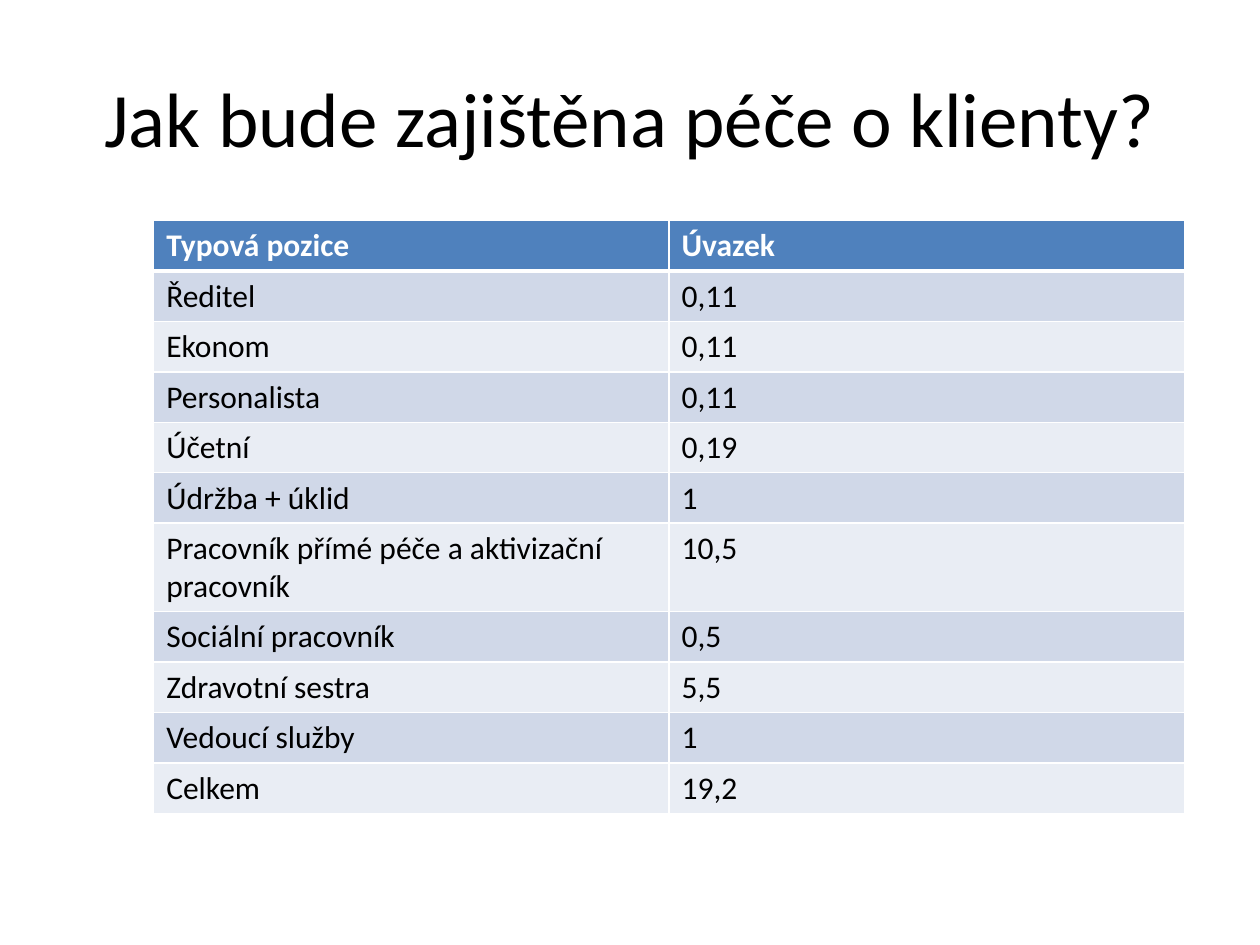
from lxml.etree import SubElement
from pptx import Presentation
from pptx.dml.color import RGBColor
from pptx.enum.text import MSO_ANCHOR, PP_ALIGN
from pptx.oxml.ns import qn
from pptx.util import Inches, Pt

# Content
TITLE = "Jak bude zajištěna péče o klienty?"
HEADER = ("Typová pozice", "Úvazek")
POSITIONS = [
    ("Ředitel", "0,11"),
    ("Ekonom", "0,11"),
    ("Personalista", "0,11"),
    ("Účetní", "0,19"),
    ("Údržba + úklid", "1"),
    ("Pracovník přímé péče a aktivizační pracovník", "10,5"),
    ("Sociální pracovník", "0,5"),
    ("Zdravotní sestra", "5,5"),
    ("Vedoucí služby", "1"),
    ("Celkem", "19,2"),
]

# Style
FONT = "Calibri"
BLACK, WHITE, BLUE = "000000", "FFFFFF", "4F81BD"
BANDS = ("E9EDF4", "D0D8E8")
COLUMN_WIDTH, ROW_HEIGHT = 4.09, 0.4


def color(value):
    return RGBColor.from_string(value)


def write(frame, text, size=18, fill=BLACK, bold=False, align=PP_ALIGN.LEFT):
    paragraph = frame.paragraphs[0]
    paragraph.alignment = align
    run = paragraph.add_run()
    run.text = text
    run.font.name = FONT
    run.font.size = Pt(size)
    run.font.bold = bold
    run.font.color.rgb = color(fill)


def set_borders(cell, **widths):
    properties = cell._tc.get_or_add_tcPr()
    for side in "LRTB":
        line = SubElement(properties, qn(f"a:ln{side}"), w=str(Pt(widths.get(side, 1))))
        solid = SubElement(line, qn("a:solidFill"))
        SubElement(solid, qn("a:srgbClr"), val=WHITE)


presentation = Presentation()
presentation.slide_width = Inches(10)
presentation.slide_height = Inches(7.5)
slide = presentation.slides.add_slide(presentation.slide_layouts[6])

# Title
title = slide.shapes.add_textbox(Inches(0.5), Inches(0.3), Inches(9), Inches(1.25))
title.text_frame.word_wrap = True
title.text_frame.vertical_anchor = MSO_ANCHOR.MIDDLE
write(title.text_frame, TITLE, size=44, align=PP_ALIGN.CENTER)

# Table of positions
rows = [HEADER, *POSITIONS]
table = slide.shapes.add_table(
    len(rows), len(HEADER), Inches(1.22), Inches(1.75),
    Inches(COLUMN_WIDTH * len(HEADER)), Inches(ROW_HEIGHT * len(rows)),
).table
for column in table.columns:
    column.width = Inches(COLUMN_WIDTH)

for row_index, row in enumerate(rows):
    table.rows[row_index].height = Inches(ROW_HEIGHT)
    is_header = row_index == 0
    for column_index, text in enumerate(row):
        cell = table.cell(row_index, column_index)
        set_borders(cell, T=3 if row_index == 1 else 1, B=3 if is_header else 1)
        cell.fill.solid()
        cell.fill.fore_color.rgb = color(BLUE if is_header else BANDS[row_index % 2])
        write(cell.text_frame, text, fill=WHITE if is_header else BLACK, bold=is_header)

presentation.save("out.pptx")
